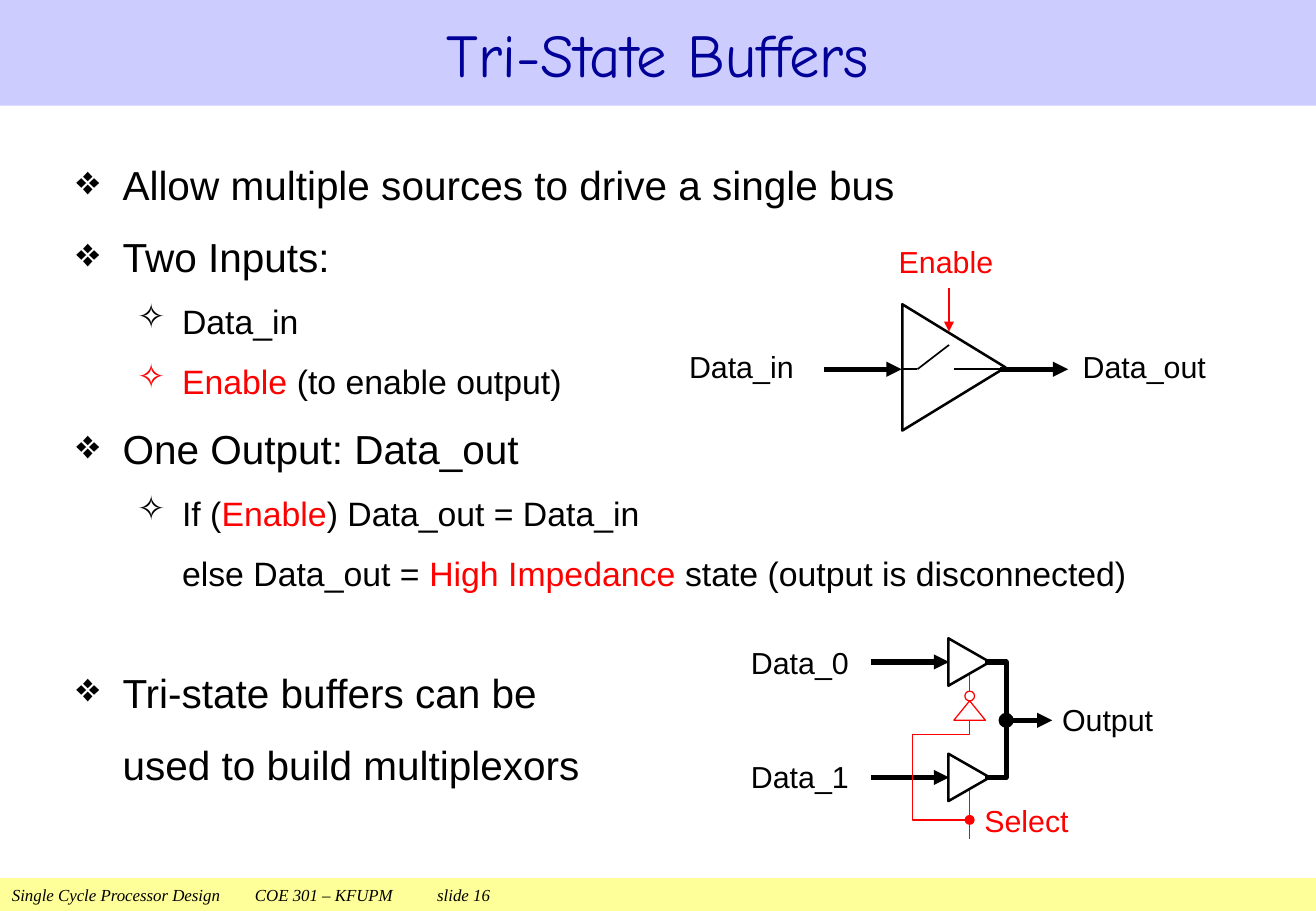
"""Build the Tri-State Buffers slide with its two circuit diagrams."""
from lxml import etree
from pptx import Presentation
from pptx import util as u
from pptx.dml.color import RGBColor
from pptx.enum import shapes, text
from pptx.oxml.ns import qn

theme = dict(
    black="000000", red="FF0000", white="FFFFFF", navy="000099",
    lilac="CCCCFF", yellow="FFFF99",
    body="Arial", head="Comic Neue", foot="Times New Roman",
    title=36, main=24, sub=20, label=18, small=10,
    thick=3, edge=1.5, fine=1, hair=0.75)
rgb = {k: RGBColor.from_string(v) for k, v in theme.items()
       if isinstance(v, str) and len(v) == 6}
cols, rows = 108.3, 75
cell = u.Inches(0.1)

deck = Presentation()
deck.slide_width, deck.slide_height = int(cols * cell), rows * cell
page = deck.slides.add_slide(deck.slide_layouts[6]).shapes


def grid(*spots):
    """Turn grid cells into whole lengths."""
    return [round(s * cell) for s in spots]


def ink(item, color, weight, head="", tail=""):
    """Line an item, end it with marks and drop its shadow."""
    if color:
        item.line.color.rgb = rgb[color]
        item.line.width = u.Pt(theme[weight])
    else:
        item.line.fill.background()
    props = item.element.spPr
    for tag, mark in (("a:headEnd", head), ("a:tailEnd", tail)):
        if mark:
            etree.SubElement(props.find(qn("a:ln")), qn(tag), type=mark)
    etree.SubElement(props, qn("a:effectLst"))


bars = [
    (0, 8.7, "lilac", "Tri-State Buffers", "head", "title", "navy", "CENTER"),
    (72.3, 2.7, "yellow",
     "Single Cycle Processor Design\tCOE 301 – KFUPM\tslide 16",
     "foot", "small", "black", "LEFT")]
for top, high, fill, words, face, size, color, side in bars:
    bar = page.add_shape(shapes.MSO_SHAPE.RECTANGLE, *grid(0, top, cols, high))
    bar.fill.solid()
    bar.fill.fore_color.rgb = rgb[fill]
    ink(bar, None, None)
    bar.text_frame.text = words
    bar.text_frame.vertical_anchor = text.MSO_ANCHOR.MIDDLE
    para = bar.text_frame.paragraphs[0]
    para.alignment = text.PP_ALIGN[side]
    font = para.runs[0].font
    font.name, font.size = theme[face], u.Pt(theme[size])
    font.color.rgb, font.italic = rgb[color], face == "foot"

# level, bullet, space before as a share of the line, words with red between bars
points = [
    (0, "❖", 0, "Allow multiple sources to drive a single bus"),
    (0, "❖", 0.4, "Two Inputs:"),
    (1, "✧", 0.4, "Data_in"),
    (1, "✧", 0.4, "|Enable |(to enable output)"),
    (0, "❖", 0.4, "One Output: Data_out"),
    (1, "✧", 0.4, "If (|Enable|) Data_out = Data_in"),
    (1, "", 0.4, "else Data_out = |High Impedance |state (output is disconnected)"),
    (0, "❖", 1.5, "Tri-state buffers can be"),
    (0, "", 0.4, "used to build multiplexors")]
frame = page.add_textbox(*grid(5.3, 12.3, 97.5, 56.2)).text_frame
frame.word_wrap = True
for n, (level, mark, gap, words) in enumerate(points):
    para = frame.add_paragraph() if n else frame.paragraphs[0]
    size = theme["sub" if level else "main"]
    para.level, para.line_spacing = level, 1.1
    para.space_before = u.Pt(gap * size * 1.15)
    left, hang = grid(*((8.7, 3.7) if level else (3.8, 3.8)))
    props = para._p.get_or_add_pPr()
    props.set("marL", str(left))
    props.set("indent", str(-hang if mark else 0))
    if mark:
        etree.SubElement(props, qn("a:buChar"), char=mark)
    else:
        etree.SubElement(props, qn("a:buNone"))
    for k, part in enumerate(words.split("|")):
        if part:
            run = para.add_run()
            run.text = part
            run.font.name, run.font.size = theme["body"], u.Pt(size)
            run.font.color.rgb = rgb["red" if k % 2 else "black"]

main, top, low, mid = 30.4, 54.5, 64, 59.3
stem, bus = 79.8, 82.8
stubs = [(stem, 64.8, stem, 69.1, "red", "hair", ""),
         (stem, 55.3, stem, 56.9, "red", "hair", "")]
gates = [
    ("ISOSCELES_TRIANGLE", 73.3, 26, 10.4, 8.5, 90, "black", "edge"),
    ("ISOSCELES_TRIANGLE", 77.8, 52.8, 3.9, 3.4, 90, "black", "edge"),
    ("ISOSCELES_TRIANGLE", 77.8, 62.3, 3.9, 3.4, 90, "black", "edge"),
    ("ISOSCELES_TRIANGLE", 78.5, 57.7, 2.6, 1.6, 0, "red", "hair"),
    ("OVAL", 79.4, 56.9, 0.8, 0.8, 0, "red", "hair")]
wires = [
    (67.8, main, 74.2, main, "black", "thick", "triangle"),
    (82.3, main, 87.9, main, "black", "thick", "triangle"),
    (74.2, main, 75.5, main, "black", "fine", ""),
    (75.5, main, 78.1, 28.4, "black", "fine", ""),
    (78.5, main, 82.7, main, "black", "fine", ""),
    (78.1, 23.7, 78.1, 27.3, "red", "hair", "triangle"),
    (71.7, top, 78.1, top, "black", "thick", "triangle"),
    (71.7, low, 78.1, low, "black", "thick", "triangle"),
    (bus, mid, 86.6, mid, "black", "thick", "triangle")]
bends = [
    ([(stem, mid), (stem, 60.5), (75.1, 60.5), (75.1, 67.5), (stem, 67.5)],
     "red", "hair", "oval"),
    ([(81.1, top), (bus, top), (bus, low), (81.1, low)], "black", "thick", "")]

for group in (stubs, gates, wires):
    for entry in group:
        if group is gates:
            kind, x, y, w, h, turn, color, weight = entry
            gate = page.add_shape(shapes.MSO_SHAPE[kind], *grid(x, y, w, h))
            gate.rotation = turn
            gate.fill.solid()
            gate.fill.fore_color.rgb = rgb["white"]
            ink(gate, color, weight)
        else:
            *ends, color, weight, tail = entry
            wire = page.add_connector(shapes.MSO_CONNECTOR.STRAIGHT, *grid(*ends))
            ink(wire, color, weight, "oval" if ends[0] == bus else "", tail)
for path_pts, color, weight, tail in bends:
    first, *rest = [grid(*p) for p in path_pts]
    pen = page.build_freeform(*first)
    pen.add_line_segments(rest, close=False)
    bend = pen.convert_to_shape()
    bend.fill.background()
    ink(bend, color, weight, tail=tail)

labels = [
    ("Data_in", 56.7, 28, 11.5, 4.3, "black", "LEFT"),
    ("Data_out", 89.1, 28, 11.5, 4.3, "black", "LEFT"),
    ("Enable", 72.1, 19.8, 11.5, 3.5, "red", "CENTER"),
    ("Data_0", 61.8, 52.6, 9.8, 3.9, "black", "LEFT"),
    ("Data_1", 61.8, 62, 9.8, 3.9, "black", "LEFT"),
    ("Output", 87.4, 57.3, 9.8, 3.9, "black", "LEFT"),
    ("Select", 81, 65.6, 9.8, 3.9, "red", "LEFT")]
for words, x, y, w, h, color, side in labels:
    frame = page.add_textbox(*grid(x, y, w, h)).text_frame
    frame.margin_left = frame.margin_right = 0
    frame.margin_top = frame.margin_bottom = 0
    frame.word_wrap = True
    frame.vertical_anchor = text.MSO_ANCHOR.MIDDLE
    frame.text = words
    para = frame.paragraphs[0]
    para.alignment = text.PP_ALIGN[side]
    font = para.runs[0].font
    font.name, font.size = theme["body"], u.Pt(theme["label"])
    font.color.rgb = rgb[color]

deck.save("out.pptx")
